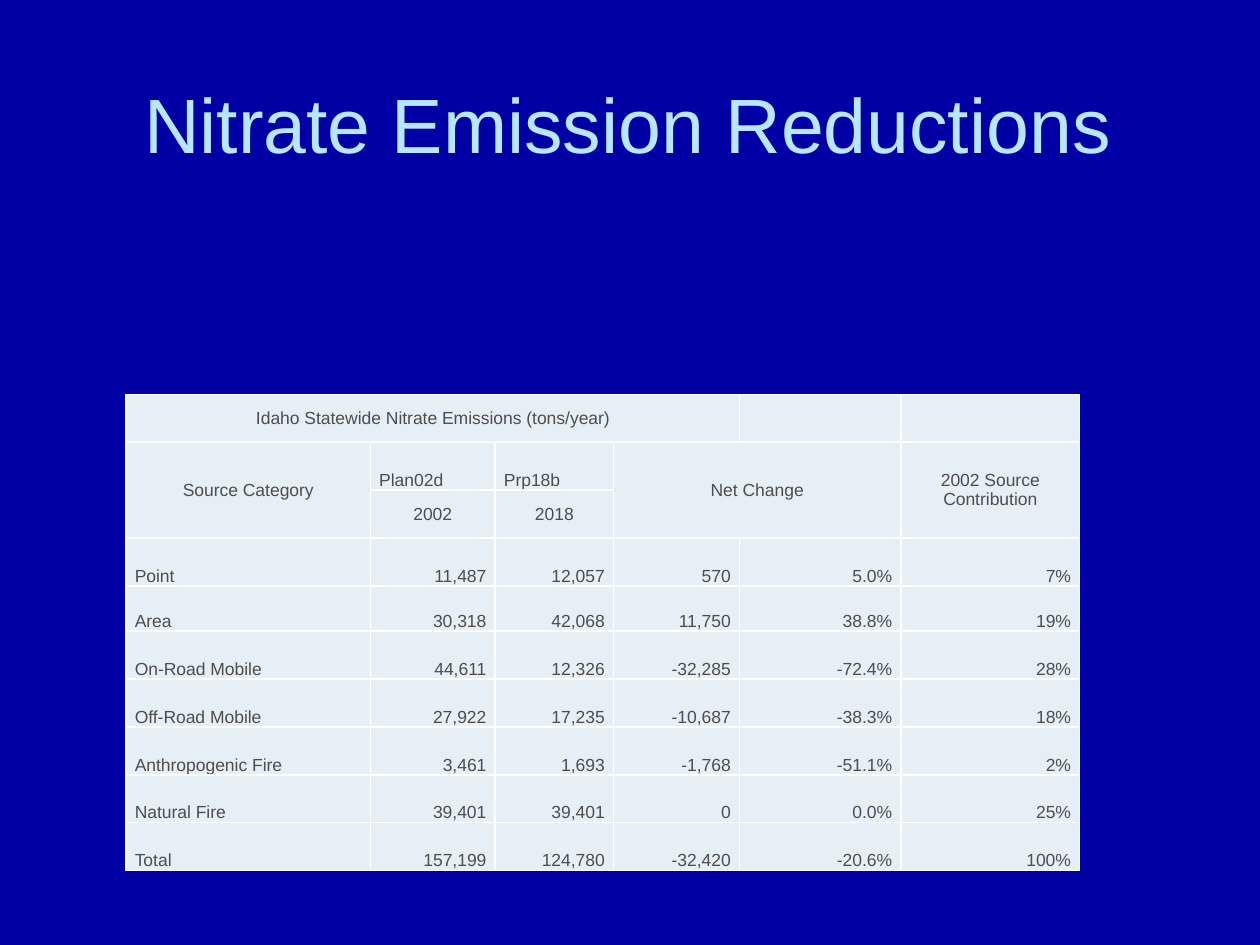
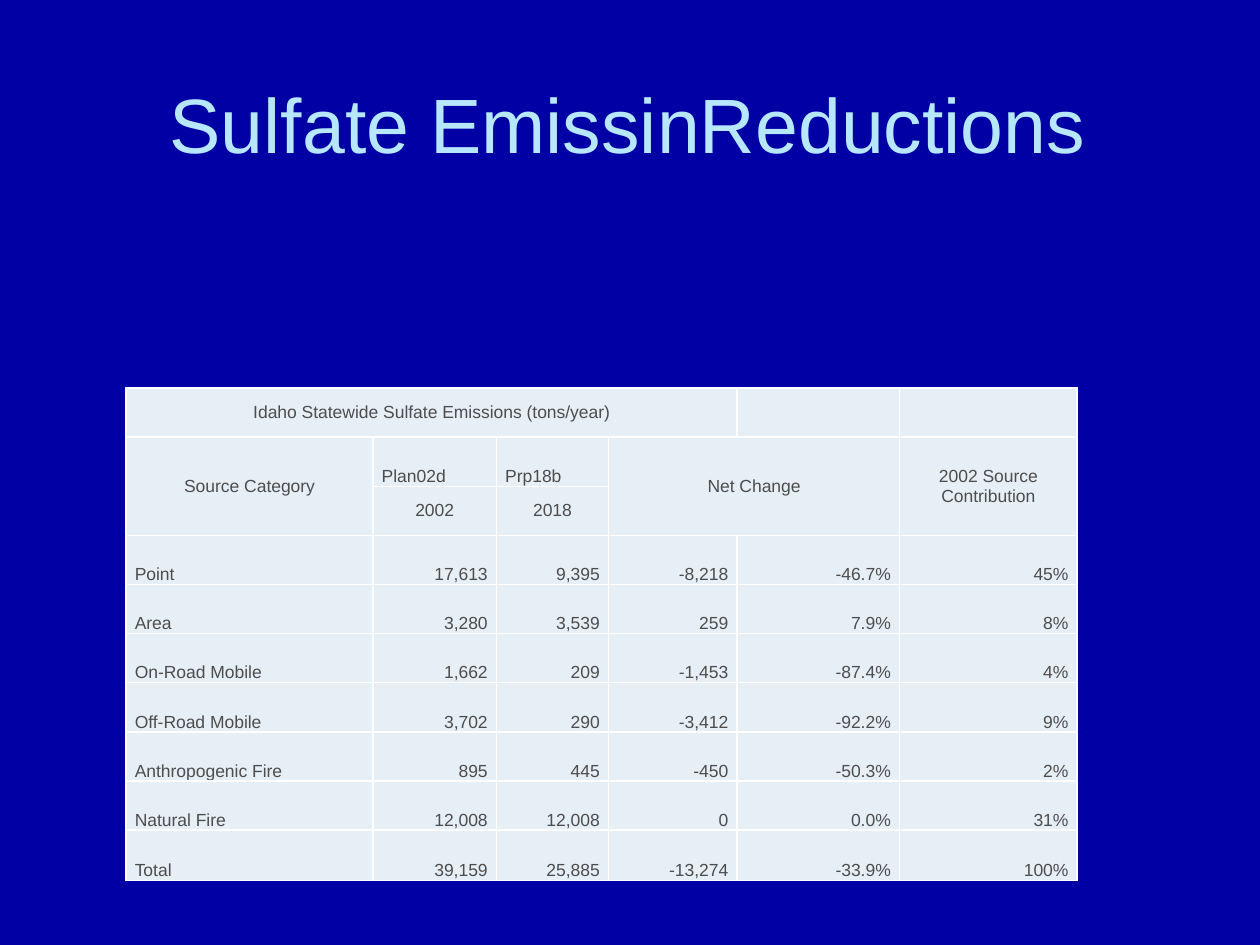
from lxml import etree
from pptx import Presentation
from pptx.dml.color import RGBColor
from pptx.enum import text
from pptx.oxml import ns
from pptx.util import Inches, Pt

LEFT, CENTER, RIGHT = text.PP_ALIGN.LEFT, text.PP_ALIGN.CENTER, text.PP_ALIGN.RIGHT
MIDDLE, BOTTOM = text.MSO_ANCHOR.MIDDLE, text.MSO_ANCHOR.BOTTOM

CATEGORIES = ["Point", "Area", "On-Road Mobile", "Off-Road Mobile",
              "Anthropogenic Fire", "Natural Fire", "Total"]
FIRST_DATA_ROW = 3

# One line per category: 2002, 2018, net change, net change in percent, 2002 share
NITRATE = """
11,487 12,057 570 5.0% 7%
30,318 42,068 11,750 38.8% 19%
44,611 12,326 -32,285 -72.4% 28%
27,922 17,235 -10,687 -38.3% 18%
3,461 1,693 -1,768 -51.1% 2%
39,401 39,401 0 0.0% 25%
157,199 124,780 -32,420 -20.6% 100%
"""
SULFATE = """
17,613 9,395 -8,218 -46.7% 45%
3,280 3,539 259 7.9% 8%
1,662 209 -1,453 -87.4% 4%
3,702 290 -3,412 -92.2% 9%
895 445 -450 -50.3% 2%
12,008 12,008 0 0.0% 31%
39,159 25,885 -13,274 -33.9% 100%
"""


def color(hex_value):
    return RGBColor.from_string(hex_value)


def write(frame, content, size, fill, align=LEFT):
    """Put one formatted paragraph in a text frame."""
    para = frame.paragraphs[0]
    para.alignment = align
    span = para.add_run()
    span.text = content
    span.font.name = EmissionDeck.FONT
    span.font.size = Pt(size)
    span.font.color.rgb = color(fill)


def add_borders(cell, hex_value, width):
    properties = cell._tc.get_or_add_tcPr()
    for side in ("a:lnL", "a:lnR", "a:lnT", "a:lnB"):
        line = etree.SubElement(properties, ns.qn(side), w=str(Pt(width)))
        solid = etree.SubElement(line, ns.qn("a:solidFill"))
        etree.SubElement(solid, ns.qn("a:srgbClr"), val=hex_value)


class EmissionDeck:
    FONT = "Arial"
    BACKGROUND, TITLE = "0000A4", "B7E7FF"
    CELL, BORDER, BODY = "E7EFF6", "FFFFFF", "4D4D4D"

    def __init__(self):
        self.deck = Presentation()
        self.deck.slide_width, self.deck.slide_height = Inches(10), Inches(7.5)
        fill = self.deck.slide_master.background.fill
        fill.solid()
        fill.fore_color.rgb = color(self.BACKGROUND)
        self.page = None

    def add_page(self, title):
        self.page = self.deck.slides.add_slide(self.deck.slide_layouts[5])
        box = self.page.shapes.title
        box.left, box.top = Inches(0.33), Inches(0.25)
        box.width, box.height = Inches(9.31), Inches(1.45)
        box.text_frame.vertical_anchor = MIDDLE
        write(box.text_frame, title, 44, self.TITLE, CENTER)

    def add_grid(self, top, widths, heights):
        """Add an empty table with the shared cell style."""
        frame = self.page.shapes.add_table(
            len(heights), len(widths), Inches(1), Inches(top),
            Inches(sum(widths)), Inches(sum(heights)))
        table = frame.table
        table.first_row = table.horz_banding = False
        for column, width in zip(table.columns, widths):
            column.width = Inches(width)
        for row, height in zip(table.rows, heights):
            row.height = Inches(height)
        for cell in table.iter_cells():
            cell.margin_left = cell.margin_right = Inches(0.07)
            cell.margin_top = cell.margin_bottom = 0
            add_borders(cell, self.BORDER, 1)
            cell.fill.solid()
            cell.fill.fore_color.rgb = color(self.CELL)
        return table

    def fill_cell(self, cell, content, align=LEFT, anchor=BOTTOM):
        cell.vertical_anchor = anchor
        write(cell.text_frame, content, 10, self.BODY, align)

    def add_emissions(self, pollutant, figures, top, widths, heights):
        table = self.add_grid(top, widths, heights)
        # Row, column, last row, last column, text
        headings = [
            (0, 0, 0, 3, f"Idaho Statewide {pollutant} Emissions (tons/year)"),
            (1, 0, 2, 0, "Source Category"),
            (1, 3, 2, 4, "Net Change"),
            (1, 5, 2, 5, "2002 Source Contribution"),
            (2, 1, 2, 1, "2002"),
            (2, 2, 2, 2, "2018"),
        ]
        for row, column, last_row, last_column, heading in headings:
            cell = table.cell(row, column)
            if (row, column) != (last_row, last_column):
                cell.merge(table.cell(last_row, last_column))
            self.fill_cell(cell, heading, CENTER, MIDDLE)
        for column, inventory in enumerate(("Plan02d", "Prp18b"), 1):
            self.fill_cell(table.cell(1, column), inventory)

        lines = figures.strip().splitlines()
        for row, (category, line) in enumerate(zip(CATEGORIES, lines), FIRST_DATA_ROW):
            self.fill_cell(table.cell(row, 0), category)
            for column, value in enumerate(line.split(), 1):
                self.fill_cell(table.cell(row, column), value, RIGHT)


def main():
    show = EmissionDeck()
    show.add_page("Nitrate Emission Reductions")
    show.add_emissions("Nitrate", NITRATE, top=3.13,
                       widths=[1.94, 0.99, 0.94, 1, 1.28, 1.42],
                       heights=[0.38] * 4 + [0.36] + [0.38] * 5)
    show.add_page("Sulfate EmissinReductions")
    show.add_emissions("Sulfate", SULFATE, top=3.08,
                       widths=[1.96, 0.98, 0.89, 1.02, 1.29, 1.41],
                       heights=[0.39] * 9 + [0.4])
    show.deck.save("out.pptx")


if __name__ == "__main__":
    main()
